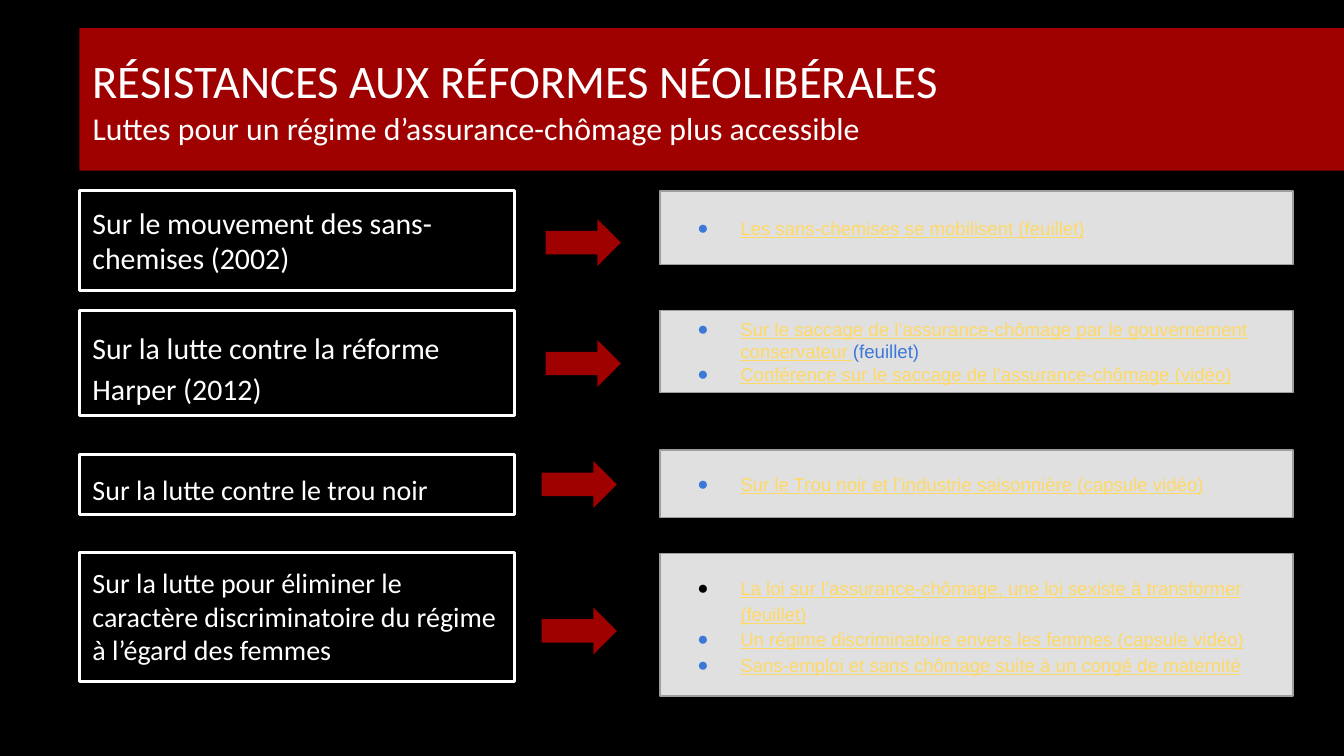
from lxml.etree import SubElement
from pptx import Presentation
from pptx.dml.color import RGBColor
from pptx.enum.shapes import MSO_SHAPE
from pptx.enum.text import MSO_ANCHOR, MSO_AUTO_SIZE, PP_ALIGN
from pptx.oxml.ns import qn
from pptx.util import Inches, Pt

HEX = {"back": "000000", "red": "CC0000", "white": "FFFFFF", "panel": "E0E0E0",
       "edge": "9E9E9E", "link": "FFD966", "blue": "3C78D8", "black": "000000"}
LEFT, WIDE = 0.59, 3.24
RIGHT, SPAN = 4.91, 4.71

ROWS = [
    {"label": "Sur le mouvement des sans-chemises (2002)", "size": 16,
     "box": (1.42, 0.74), "arrow": (4.06, 1.63), "panel": (1.42, 0.55),
     "items": [("Les sans-chemises se mobilisent (feuillet)", "", "blue")]},
    {"label": "Sur la lutte contre la réforme Harper (2012)", "size": 16, "loose": True,
     "box": (2.31, 0.78), "arrow": (4.06, 2.53), "panel": (2.31, 0.61),
     "items": [("Sur le saccage de l’assurance-chômage par le gouvernement conservateur ",
                "(feuillet)", "blue"),
               ("Conférence sur le saccage de l’assurance-chômage (vidéo)", "", "blue")]},
    {"label": "Sur la lutte contre le trou noir", "size": 15, "loose": True,
     "box": (3.38, 0.45), "arrow": (4.03, 3.43), "panel": (3.35, 0.5),
     "items": [("Sur le Trou noir et l’industrie saisonnière (capsule vidéo)", "", "blue")]},
    {"label": "Sur la lutte pour éliminer le caractère discriminatoire du régime "
              "à l’égard des femmes", "size": 15,
     "box": (4.11, 0.96), "arrow": (4.03, 4.52), "panel": (4.12, 1.06), "pitch": 1.15,
     "items": [("La loi sur l’assurance-chômage, une loi sexiste à transformer (feuillet)",
                "", "black"),
               ("Un régime discriminatoire envers les femmes (capsule vidéo)", "", "blue"),
               ("Sans-emploi et sans chômage suite à un congé de maternité", "", "blue")]},
]


def tint(name):
    """Return the named colour."""
    return RGBColor.from_string(HEX[name])


def block(slide, box, fill=None, line=None, width=0.75, kind=MSO_SHAPE.RECTANGLE):
    """Add a flat shape with even text insets."""
    shape = slide.shapes.add_shape(kind, *map(Inches, box))
    shape.shadow.inherit = False
    if fill:
        shape.fill.solid()
        shape.fill.fore_color.rgb = tint(fill)
    else:
        shape.fill.background()
    if line:
        shape.line.color.rgb = tint(line)
        shape.line.width = Pt(width)
    else:
        shape.line.fill.background()
    frame = shape.text_frame
    frame.word_wrap = True
    frame.margin_left = frame.margin_right = Inches(0.1)
    frame.margin_top = frame.margin_bottom = Inches(0.1)
    return shape


def fade(shape):
    """Make a solid fill 78 percent opaque."""
    color = shape.element.spPr.find(qn("a:solidFill"))[0]
    SubElement(color, qn("a:alpha"), val="78000")


def style(para, size, color, face="Calibri"):
    """Set the look of a paragraph."""
    para.alignment = PP_ALIGN.LEFT
    para.font.size = Pt(size)
    para.font.name = face
    para.font.color.rgb = tint(color)


def bullet(para, color):
    """Give a paragraph a hanging round bullet."""
    props = para._p.get_or_add_pPr()
    props.set("marL", str(Inches(0.5)))
    props.set("indent", str(Inches(-0.32)))
    paint = SubElement(props, qn("a:buClr"))
    SubElement(paint, qn("a:srgbClr"), val=HEX[color])
    SubElement(props, qn("a:buFont"), typeface="Arial")
    SubElement(props, qn("a:buChar"), char="●")


def banner(slide, box):
    """Place the title band."""
    shape = block(slide, box, "red")
    fade(shape)
    frame = shape.text_frame
    frame.vertical_anchor = MSO_ANCHOR.MIDDLE
    frame.text = ("RÉSISTANCES AUX RÉFORMES NÉOLIBÉRALES\n"
                  "Luttes pour un régime d’assurance-chômage plus accessible")
    for para, size in zip(frame.paragraphs, (25, 17)):
        style(para, size, "white")


def label(slide, box, text, size, loose):
    """Place an outlined topic."""
    frame = block(slide, box, line="white", width=1.5).text_frame
    frame.vertical_anchor = MSO_ANCHOR.TOP
    frame.auto_size = MSO_AUTO_SIZE.SHAPE_TO_FIT_TEXT
    para = frame.paragraphs[0]
    para.text = text
    style(para, size, "white")
    if loose:
        para.line_spacing = 1.15
        para.space_after = Pt(12)


def panel(slide, box, items, pitch):
    """Place a grey list of resources."""
    frame = block(slide, box, "panel", "edge").text_frame
    frame.vertical_anchor = MSO_ANCHOR.MIDDLE
    for index, (link, plain, dot) in enumerate(items):
        para = frame.add_paragraph() if index else frame.paragraphs[0]
        bullet(para, dot)
        style(para, 10, "link", "Arial")
        para.font.underline = True
        if pitch:
            para.line_spacing = pitch
        para.add_run().text = link
        if plain:
            run = para.add_run()
            run.text = plain
            run.font.underline = False
            run.font.color.rgb = tint("blue")


def row(slide, data):
    """Place a topic, its arrow and its resources."""
    top, high = data["box"]
    label(slide, (LEFT, top, WIDE, high), data["label"], data["size"], data.get("loose"))
    fade(block(slide, (*data["arrow"], 0.56, 0.35), "red", kind=MSO_SHAPE.RIGHT_ARROW))
    top, high = data["panel"]
    panel(slide, (RIGHT, top, SPAN, high), data["items"], data.get("pitch"))


def main():
    """Build the slide."""
    deck = Presentation()
    deck.slide_width = Inches(10)
    deck.slide_height = deck.slide_width * 9 // 16
    slide = deck.slides.add_slide(deck.slide_layouts[6])
    slide.background.fill.solid()
    slide.background.fill.fore_color.rgb = tint("back")
    banner(slide, (LEFT, 0.21, 9.41, 1.06))
    for data in ROWS:
        row(slide, data)
    deck.save("out.pptx")


if __name__ == "__main__":
    main()
